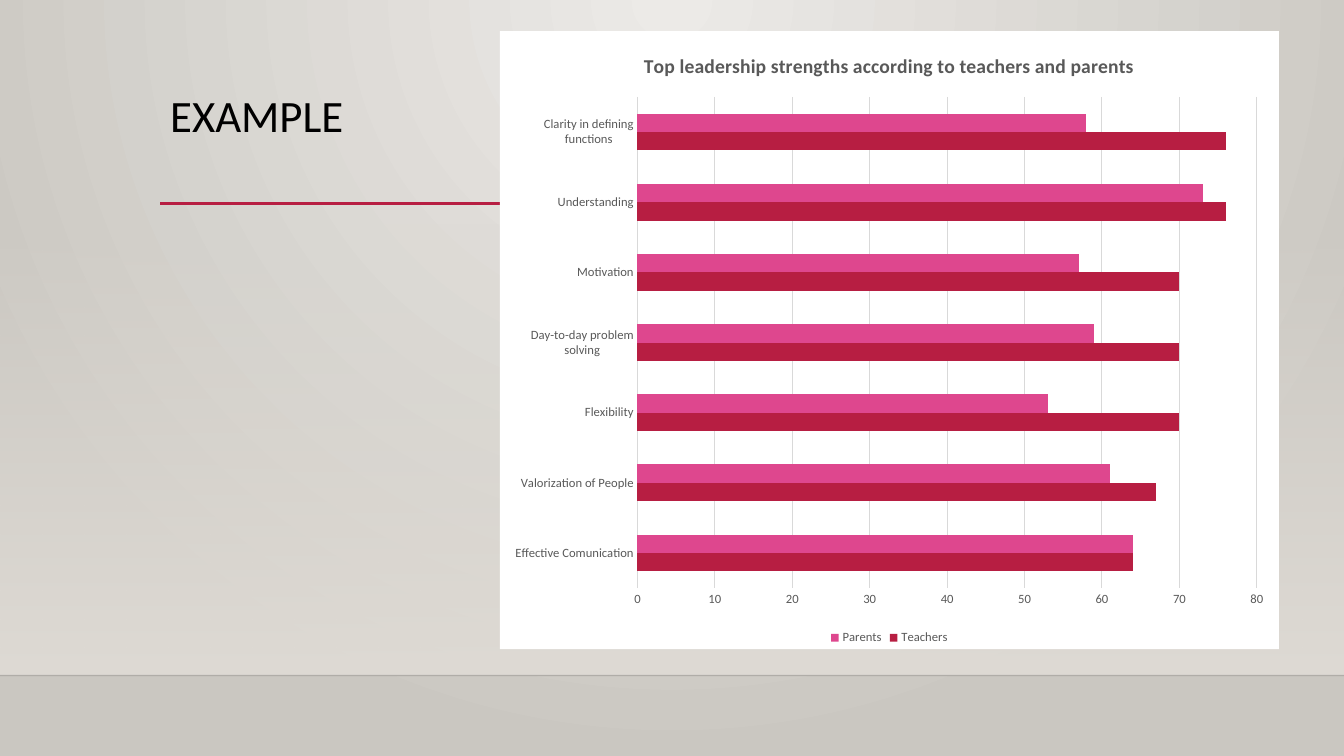
from lxml import etree
from pptx import Presentation
from pptx.chart.data import CategoryChartData
from pptx.dml.color import RGBColor
from pptx.enum.chart import XL_CHART_TYPE, XL_LEGEND_POSITION, XL_TICK_MARK
from pptx.enum.shapes import MSO_CONNECTOR, MSO_SHAPE
from pptx.enum.text import MSO_ANCHOR
from pptx.oxml import parse_xml
from pptx.oxml.ns import qn
from pptx.util import Pt

BAR_CLUSTERED = XL_CHART_TYPE.BAR_CLUSTERED
LEGEND_BOTTOM = XL_LEGEND_POSITION.BOTTOM
NO_TICK = XL_TICK_MARK.NONE
STRAIGHT = MSO_CONNECTOR.STRAIGHT
RECTANGLE = MSO_SHAPE.RECTANGLE
TOP = MSO_ANCHOR.TOP

BLACK = RGBColor(0x00, 0x00, 0x00)
GRAY = RGBColor(0x59, 0x59, 0x59)
GRID = RGBColor(0xD9, 0xD9, 0xD9)
CRIMSON = RGBColor(0xB7, 0x1E, 0x42)
PINK = RGBColor(0xDE, 0x47, 0x8E)
GLOW = RGBColor(0xEC, 0xEA, 0xE7)
STONE = RGBColor(0xCA, 0xC7, 0xC1)
SAND = RGBColor(0xDF, 0xDB, 0xD5)
FONT = "Calibri"
WIDTH, HEIGHT = 960, 540


def format_font(font, size, color, bold=False):
    for name, value in {"name": FONT, "size": Pt(size), "bold": bold}.items():
        setattr(font, name, value)
    font.color.rgb = color


def add_rule(left, right, top, color, weight):
    rule = page.shapes.add_connector(STRAIGHT, Pt(left), Pt(top), Pt(right), Pt(top))
    rule.line.color.rgb = color
    rule.line.width = Pt(weight)
    etree.SubElement(rule.element.spPr, qn("a:effectLst"))
    return rule


deck = Presentation()
deck.slide_width, deck.slide_height = Pt(WIDTH), Pt(HEIGHT)
page = deck.slides.add_slide(deck.slide_layouts[6])

# Background: glow spreading from the top centre
backdrop = page.background.fill
backdrop.gradient()
for stop, color in zip(backdrop.gradient_stops, (GLOW, STONE)):
    stop.color.rgb = color
linear = next(page.element.iter(qn("a:lin")))
circle = etree.Element(qn("a:path"), {"path": "circle"})
etree.SubElement(circle, qn("a:fillToRect"),
                 {"l": "43000", "t": "0", "r": "43000", "b": "100000"})
linear.getparent().replace(linear, circle)

# Wall: fades in towards the floor
wall = page.shapes.add_shape(RECTANGLE, Pt(0), Pt(159), Pt(WIDTH), Pt(323.5))
wall.shadow.inherit = False
wall.line.fill.background()
wall.fill.gradient()
wall.fill.gradient_angle = 270
for stop in wall.fill.gradient_stops:
    stop.color.rgb = SAND
clear_color = next(wall.element.iter(qn("a:srgbClr")))
etree.SubElement(clear_color, qn("a:alpha"), {"val": "0"})

# Floor edge and title rule
floor_edge = add_rule(0, WIDTH, 482.5, BLACK, 1)
edge_color = next(floor_edge.element.iter(qn("a:srgbClr")))
etree.SubElement(edge_color, qn("a:alpha"), {"val": "20000"})
add_rule(114.5, 871, 145.3, CRIMSON, 2.5)

# Title
title_box = page.shapes.add_textbox(Pt(114.5), Pt(63.4), Pt(756), Pt(82.5))
title_box.text_frame.word_wrap = True
title_box.text_frame.vertical_anchor = TOP
para = title_box.text_frame.paragraphs[0]
para.line_spacing = 0.9
span = para.add_run()
span.text = "EXAMPLE"
format_font(span.font, 32, BLACK)

# Chart
strengths = CategoryChartData()
strengths.categories = [
    "Effective Comunication", "Valorization of People", "Flexibility",
    "Day-to-day problem solving", "Motivation", "Understanding",
    "Clarity in defining functions",
]
strengths.add_series("Teachers", (64, 67, 70, 70, 70, 76, 76))
strengths.add_series("Parents", (64, 61, 53, 59, 57, 73, 58))
chart = page.shapes.add_chart(BAR_CLUSTERED, Pt(357), Pt(22.2), Pt(556.5), Pt(441.5),
                              strengths).chart
format_font(chart.font, 10, BLACK)
chart_panel = parse_xml(
    '<c:spPr xmlns:c="http://schemas.openxmlformats.org/drawingml/2006/chart"'
    ' xmlns:a="http://schemas.openxmlformats.org/drawingml/2006/main">'
    '<a:solidFill><a:srgbClr val="FFFFFF"/></a:solidFill>'
    '<a:ln><a:noFill/></a:ln></c:spPr>')
chart.element.find(qn("c:chart")).addnext(chart_panel)

# Chart title and legend
chart.has_title = True
heading = chart.chart_title.text_frame.paragraphs[0].add_run()
heading.text = "Top leadership strengths according to teachers and parents"
format_font(heading.font, 14, GRAY, bold=True)
chart.chart_title.include_in_layout = False
chart.has_legend = True
chart.legend.position = LEGEND_BOTTOM
chart.legend.include_in_layout = False
format_font(chart.legend.font, 9, GRAY)

# Bars
plot = chart.plots[0]
plot.vary_by_categories = False
plot.gap_width = 182
plot.overlap = 0
for series, color in zip(plot.series, (CRIMSON, PINK)):
    series.format.fill.solid()
    series.format.fill.fore_color.rgb = color

# Axes
values = chart.value_axis
for axis in (chart.category_axis, values):
    axis.major_tick_mark = axis.minor_tick_mark = NO_TICK
    format_font(axis.tick_labels.font, 9, GRAY)
values.minimum_scale, values.maximum_scale, values.major_unit = 0, 80, 10
values.has_major_gridlines = True
values.format.line.fill.background()
for line in (chart.category_axis.format.line, values.major_gridlines.format.line):
    line.color.rgb = GRID
    line.width = Pt(0.75)

deck.save("out.pptx")
